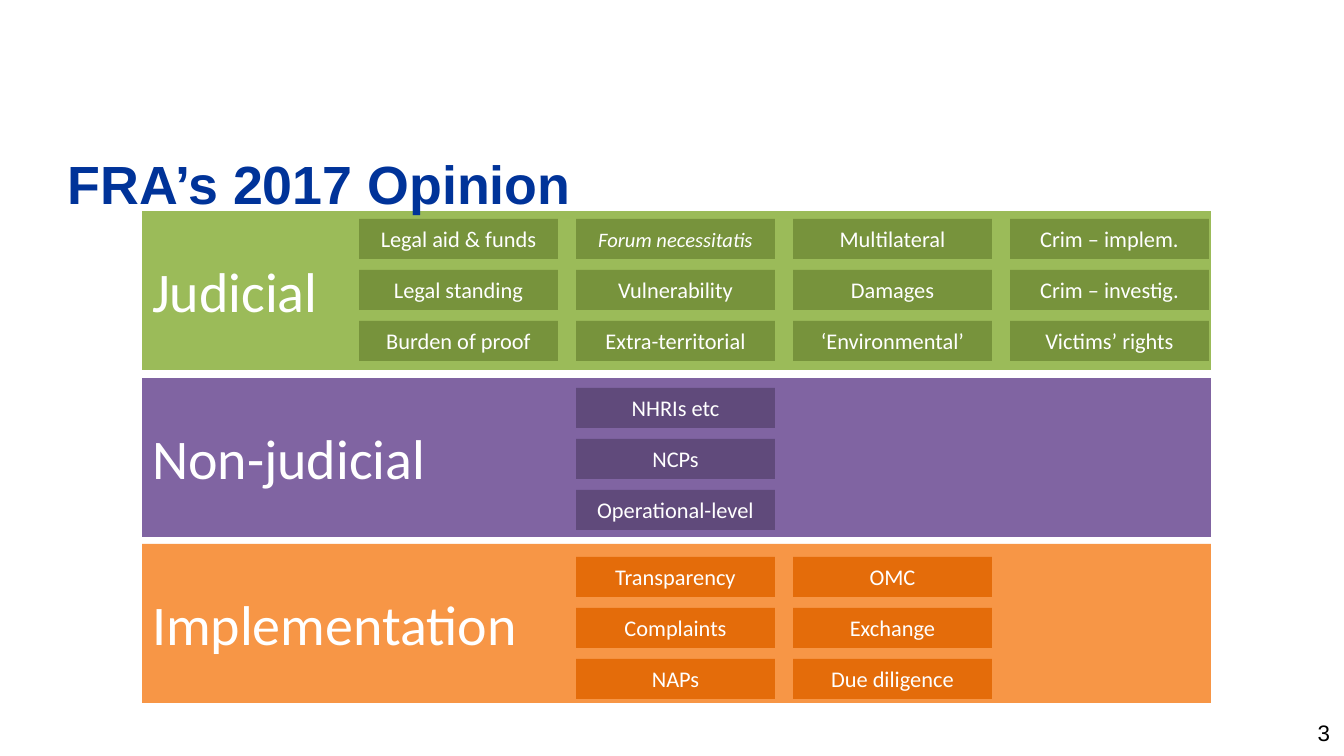
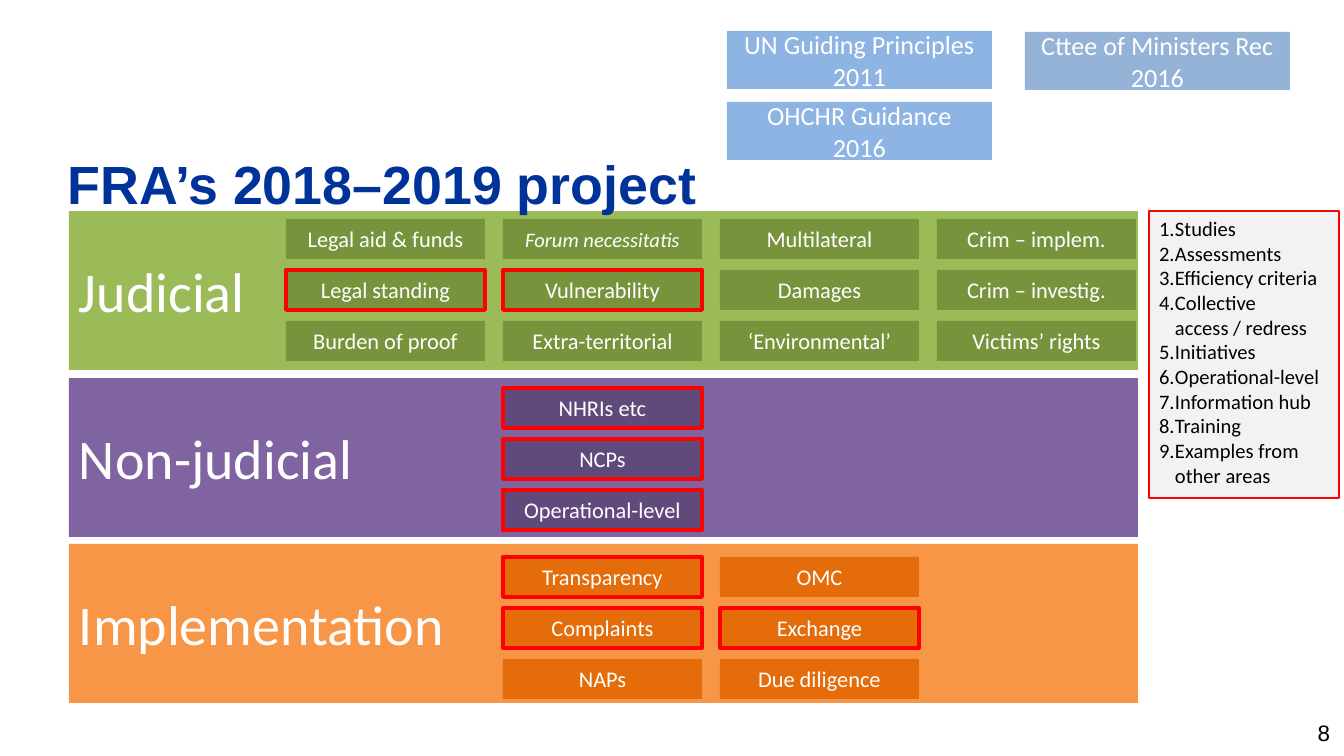
from lxml import etree
from pptx import Presentation
from pptx.dml.color import RGBColor
from pptx.enum.shapes import MSO_SHAPE
from pptx.enum.text import MSO_ANCHOR, PP_ALIGN
from pptx.oxml.ns import qn
from pptx.util import Emu, Pt

RECTANGLE = MSO_SHAPE.RECTANGLE
TOP, MIDDLE = MSO_ANCHOR.TOP, MSO_ANCHOR.MIDDLE
LEFT, CENTER, RIGHT = PP_ALIGN.LEFT, PP_ALIGN.CENTER, PP_ALIGN.RIGHT

EMU_PER_PX = 914400 / 134.4
NBSP = chr(160)
COLORS = {
    "title": "003399",
    "white": "FFFFFF",
    "black": "000000",
    "red": "FF0000",
    "green": "9BBB59",
    "dark_green": "77933C",
    "purple": "8064A2",
    "dark_purple": "604A7B",
    "orange": "F79646",
    "dark_orange": "E46C0A",
    "un_blue": "8EB4E3",
    "council_blue": "95B3D7",
    "panel": "F2F2F2",
}

BAND_WIDTH, BAND_HEIGHT = 1069, 159
CHIP_WIDTH, CHIP_HEIGHT = 199, 40
COLUMN_PITCH, ROW_PITCH = 217, 51
BANDS = [
    ("Judicial", "green", 211, 219, [
        (1, ["Legal aid & funds", "Legal standing", "Burden of proof"]),
        (2, ["Forum necessitatis", "Vulnerability", "Extra-territorial"]),
        (3, ["Multilateral", "Damages", "‘Environmental’"]),
        (4, ["Crim – implem.", "Crim – investig.", "Victims’ rights"]),
    ]),
    ("Non-judicial", "purple", 378, 388, [
        (2, ["NHRIs etc", "NCPs", "Operational-level"]),
    ]),
    ("Implementation", "orange", 544, 557, [
        (2, ["Transparency", "Complaints", "NAPs"]),
        (3, ["OMC", "Exchange", "Due diligence"]),
    ]),
]
PROJECT_TOPICS = {
    "Legal standing", "Vulnerability", "NHRIs etc", "NCPs", "Operational-level",
    "Transparency", "Complaints", "Exchange",
}
SLIDES = [
    ("FRA’s 2017 Opinion", "3", 142, set()),
    ("FRA’s 2018–2019 project", "8", 69, PROJECT_TOPICS),
]
STANDARDS = [
    ("UN Guiding Principles\n2011", "un_blue", 727, 31),
    ("Cttee of Ministers Rec\n2016", "council_blue", 1025, 32),
    ("OHCHR Guidance\n2016", "un_blue", 727, 102),
]
OUTPUTS = [
    "Studies", "Assessments", "Efficiency criteria",
    f"Collective access{NBSP}/{NBSP}redress", "Initiatives", "Operational-level",
    "Information hub", "Training", "Examples from other areas",
]


def px(length):
    return Emu(round(length * EMU_PER_PX))


def add_text(slide, text, *, box, size, fill=None, line=None, line_width=2,
             color="white", font="Calibri", bold=False, italic=False,
             align=LEFT, anchor=MIDDLE, insets=(10, 5, 10, 5), numbered=False):
    left, top, width, height = map(px, box)
    if fill:
        shape = slide.shapes.add_shape(RECTANGLE, left, top, width, height)
        shape.shadow.inherit = False
        shape.fill.solid()
        shape.fill.fore_color.rgb = RGBColor.from_string(COLORS[fill])
        if line:
            shape.line.color.rgb = RGBColor.from_string(COLORS[line])
            shape.line.width = Pt(line_width)
        else:
            shape.line.fill.background()
    else:
        shape = slide.shapes.add_textbox(left, top, width, height)
    frame = shape.text_frame
    frame.word_wrap = True
    frame.vertical_anchor = anchor
    frame.margin_left, frame.margin_top, frame.margin_right, frame.margin_bottom = map(px, insets)
    frame.text = text
    for paragraph in frame.paragraphs:
        paragraph.alignment = align
        if numbered:
            properties = paragraph._p.get_or_add_pPr()
            properties.set("marL", str(px(16)))
            properties.set("indent", str(px(-16)))
            etree.SubElement(properties, qn("a:buAutoNum"), type="arabicPeriod")
        for run in paragraph.runs:
            run.font.name = font
            run.font.size = Pt(size)
            run.font.bold = bold
            run.font.italic = italic
            run.font.color.rgb = RGBColor.from_string(COLORS[color])


presentation = Presentation()
presentation.slide_width = px(1344)
presentation.slide_height = px(756)

for title, number, band_left, highlighted in SLIDES:
    slide = presentation.slides.add_slide(presentation.slide_layouts[6])
    add_text(slide, number, box=(1085, 711, 258, 44), size=12, font="Arial",
             color="black", align=RIGHT, insets=(13, 5, 13, 5))
    for name, color, band_top, first_row, columns in BANDS:
        add_text(slide, name, box=(band_left, band_top, BAND_WIDTH, BAND_HEIGHT),
                 size=30, fill=color)
        for column, topics in columns:
            for row, topic in enumerate(topics):
                latin = topic == "Forum necessitatis"
                add_text(slide, topic,
                         box=(band_left + column * COLUMN_PITCH, first_row + row * ROW_PITCH,
                              CHIP_WIDTH, CHIP_HEIGHT),
                         size=11 if latin else 12, italic=latin, align=CENTER,
                         fill=f"dark_{color}", line="red" if topic in highlighted else None)
    add_text(slide, title, box=(58, 140, 1228, 71), size=28.8, font="Arial",
             color="title", bold=True, anchor=TOP, insets=(10, 11, 10, 0))

for text, color, left, top in STANDARDS:
    add_text(slide, text, box=(left, top, 265, 58), size=14, fill=color, align=CENTER)
add_text(slide, "\n".join(OUTPUTS), box=(1149, 211, 190, 287), size=11, fill="panel",
         line="red", line_width=0.75, color="black", anchor=TOP, numbered=True)

presentation.save("out.pptx")
